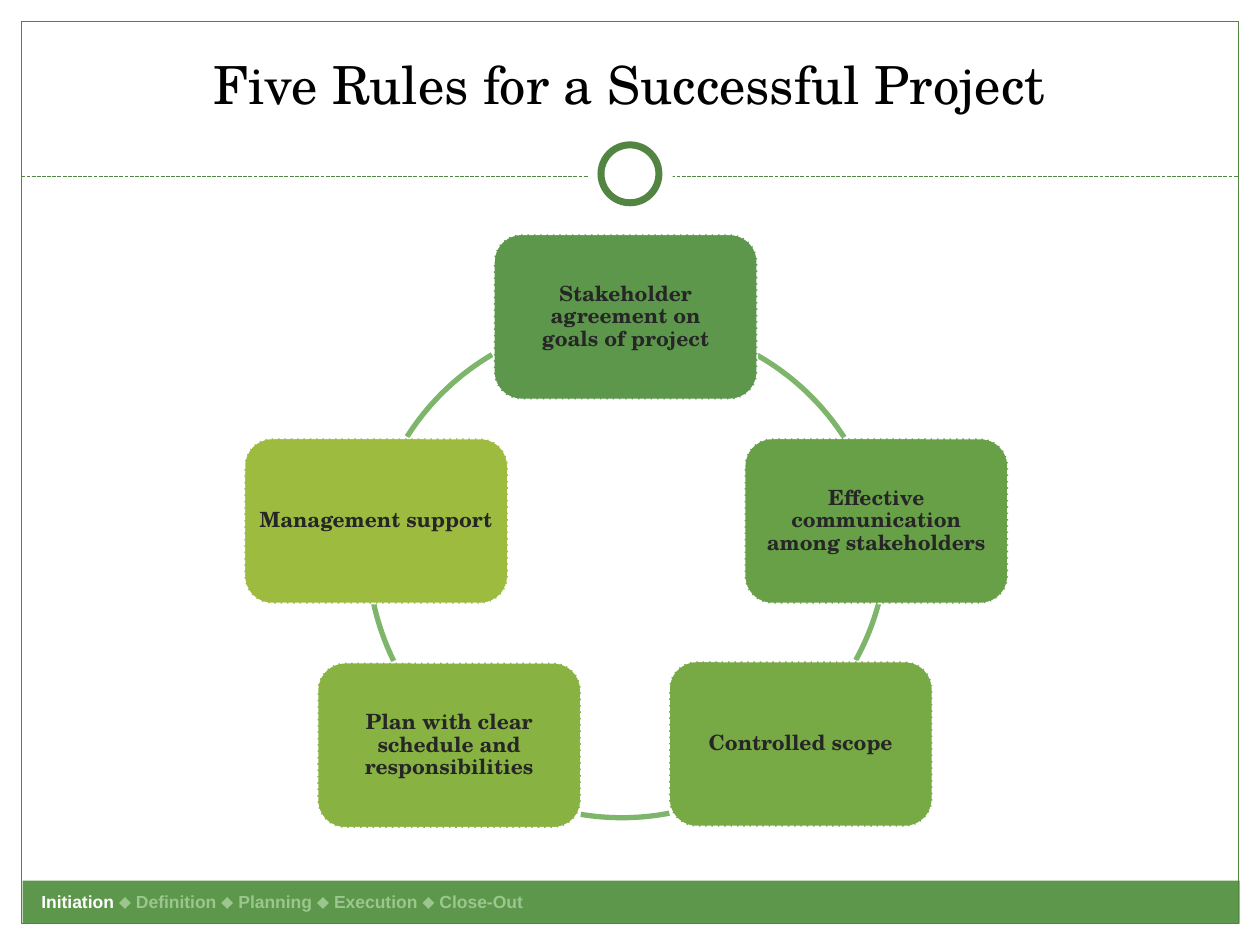
from lxml import etree
from pptx import Presentation
from pptx import util as u
from pptx.dml.color import RGBColor
from pptx.enum import dml, shapes, text
from pptx.oxml.ns import qn

deck = Presentation()
deck.slide_width, deck.slide_height = u.Inches(10), u.Inches(7.5)
slide = deck.slides.add_slide(deck.slide_layouts[6])
col, row = deck.slide_width / 100, deck.slide_height / 75
kinds = shapes.MSO_SHAPE
serif = "TeX Gyre Schola"


def draw(kind, x, y, wide, high, fill=None, edge=None, weight=0.75):
    """Add a preset shape on the grid; no fill or edge colour means none."""
    shape = slide.shapes.add_shape(
        kind, int(x * col), int(y * row), int(wide * col), int(high * row))
    shape.shadow.inherit = False
    if fill:
        shape.fill.solid()
        shape.fill.fore_color.rgb = RGBColor.from_string(fill)
    else:
        shape.fill.background()
    if edge:
        shape.line.color.rgb = RGBColor.from_string(edge)
        shape.line.width = u.Pt(weight)
    else:
        shape.line.fill.background()
    return shape


def write(para, words, size, face, hue, bold=False):
    """Add one run to a paragraph."""
    run = para.add_run()
    run.text = words
    run.font.size, run.font.name, run.font.bold = u.Pt(size), face, bold
    run.font.color.rgb = RGBColor.from_string(hue)


# Frame, footer bar, dashed rule and ring
draw(kinds.RECTANGLE, 1.8, 69.9, 96.6, 3.4, "5D974B")
draw(kinds.RECTANGLE, 1.7, 1.7, 96.6, 71.6, edge="528542")
rule = slide.shapes.add_connector(
    shapes.MSO_CONNECTOR.STRAIGHT,
    int(1.7 * col), int(14 * row), int(98.3 * col), int(14 * row))
rule.line.color.rgb = RGBColor.from_string("528542")
rule.line.width = u.Pt(0.75)
rule.line.dash_style = dml.MSO_LINE.SQUARE_DOT
etree.SubElement(rule._element.spPr, qn("a:effectLst"))
draw(kinds.OVAL, 46.7, 10.5, 6.7, 6.7, "FFFFFF")
draw(kinds.OVAL, 47.7, 11.5, 4.6, 4.6, "FFFFFF", "528542", 4)

# Title
title = slide.shapes.add_textbox(
    int(3.3 * col), int(2.5 * row), int(93.3 * col), int(8.3 * row)).text_frame
title.word_wrap = True
title.vertical_anchor = text.MSO_ANCHOR.MIDDLE
title.paragraphs[0].alignment = text.PP_ALIGN.CENTER
write(title.paragraphs[0], "Five Rules for a Successful Project", 30, serif, "000000")

# Arcs between the rules: left, top, start and end degrees clockwise from east
arcs = [
    (30.3, 25.6, 299.6, 327.1),
    (30.5, 22.8, 15, 28.9),
    (29.4, 25, 79.1, 99.4),
    (29.2, 23.7, 153.8, 167.7),
    (29.2, 25.4, 212.4, 239.6),
]
for x, y, start, end in arcs:
    arc = draw(kinds.ARC, x, y, 39.9, 39.9, edge="7DB56B", weight=3)
    # Angles are stored in 60000ths of a degree, adjustments in 100000ths
    arc.adjustments[0], arc.adjustments[1] = start * 0.6, end * 0.6

# The five rules, clockwise from the top
rules = [
    (39.2, 18.6, "5D974B", ["Stakeholder agreement on", "goals of project"]),
    (59.1, 34.8, "68A048", ["Effective communication", "among stakeholders"]),
    (53.1, 52.5, "77A945", ["Controlled scope"]),
    (25.2, 52.6, "88B242", ["Plan with clear schedule and responsibilities"]),
    (19.4, 34.8, "9DBB3F", ["Management support"]),
]
for x, y, fill, lines in rules:
    box = draw(kinds.ROUNDED_RECTANGLE, x, y, 20.9, 13.1, fill, "FFFFFF", 0.9)
    box.line.dash_style = dml.MSO_LINE.SQUARE_DOT
    frame = box.text_frame
    frame.word_wrap = True
    frame.vertical_anchor = text.MSO_ANCHOR.MIDDLE
    frame.margin_left = frame.margin_right = 0
    frame.margin_top = frame.margin_bottom = 0
    for n, line in enumerate(lines):
        para = frame.add_paragraph() if n else frame.paragraphs[0]
        para.alignment = text.PP_ALIGN.CENTER
        para.line_spacing = 0.9
        write(para, line, 12, serif, "262626", True)

# Project phases
phase = slide.shapes.add_textbox(
    int(2.3 * col), int(70.2 * row), int(43 * col), int(2.7 * row)).text_frame
phase.word_wrap = True
phase.auto_size = text.MSO_AUTO_SIZE.SHAPE_TO_FIT_TEXT
write(phase.paragraphs[0], "Initiation ", 10, "Arial", "FFFFFF", True)
write(phase.paragraphs[0], "⬥ Definition ⬥ Planning ⬥ Execution ⬥ Close-Out",
      10, "Arial", "9BC68D", True)

deck.save("out.pptx")
